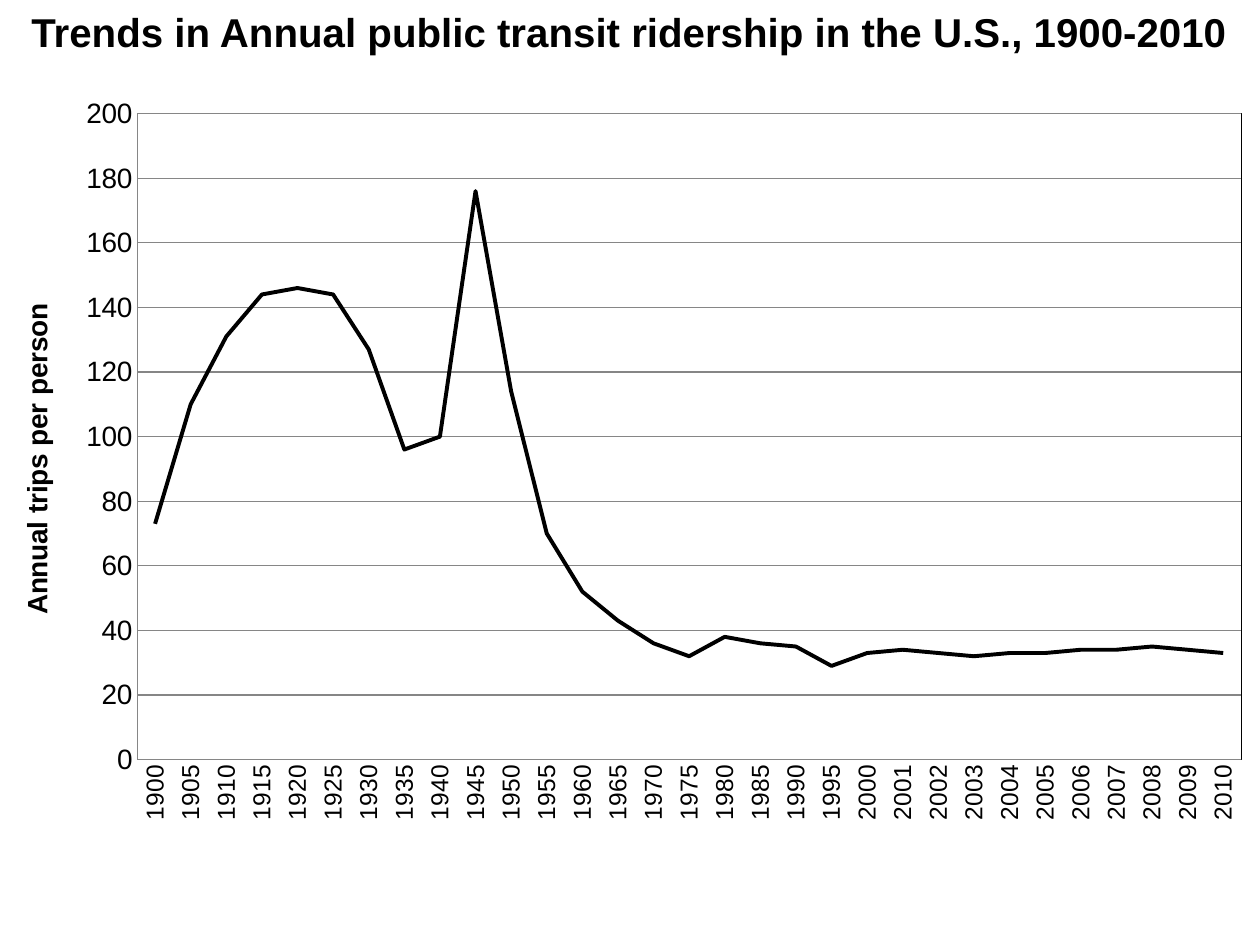
from dataclasses import dataclass

from lxml.etree import SubElement
from pptx import Presentation
from pptx.chart.data import CategoryChartData
from pptx.dml.color import RGBColor
from pptx.enum.chart import XL_CHART_TYPE, XL_TICK_MARK
from pptx.enum.text import MSO_ANCHOR, PP_ALIGN
from pptx.oxml import parse_xml
from pptx.oxml.ns import nsdecls, qn
from pptx.util import Cm, Pt


@dataclass(frozen=True)
class Theme:
    font: str = "Arial"
    ink: RGBColor = RGBColor(0, 0, 0)
    grid: RGBColor = RGBColor(0x86, 0x86, 0x86)
    title: Pt = Pt(23)
    axis: Pt = Pt(16)
    years: Pt = Pt(14)
    base: Pt = Pt(10)


theme = Theme()


def style(font, size, bold=False):
    font.name, font.size, font.bold = theme.font, size, bold
    font.color.rgb = theme.ink


prs = Presentation()
prs.slide_width, prs.slide_height = Cm(25.4), Cm(19.05)
s = prs.slides.add_slide(prs.slide_layouts[6])

# Title
tf = s.shapes.add_textbox(0, Cm(0.03), prs.slide_width, Cm(1.24)).text_frame
tf.word_wrap = True
tf.vertical_anchor = MSO_ANCHOR.TOP
p = tf.paragraphs[0]
p.text = "Trends in Annual public transit ridership in the U.S., 1900-2010"
p.alignment = PP_ALIGN.CENTER
style(p.font, theme.title, bold=True)

# Ridership data: every five years to 2000, then every year
data = CategoryChartData(number_format="0")
data.categories = [str(y) for y in (*range(1900, 2000, 5), *range(2000, 2011))]
data.add_series("Series 1", [
    73, 110, 131, 144, 146, 144, 127, 96, 100, 176,
    114, 70, 52, 43, 36, 32, 38, 36, 35, 29,
    33, 34, 33, 32, 33, 33, 34, 34, 35, 34, 33,
])

# Line chart
chart = s.shapes.add_chart(XL_CHART_TYPE.LINE, 0, Cm(1.9), prs.slide_width,
                           Cm(15.04), data).chart
chart.has_legend = False
chart.has_title = False
style(chart.font, theme.base)
chart.plots[0].vary_by_categories = False
ridership = chart.plots[0].series[0]
ridership.smooth = False
ridership.format.line.color.rgb = theme.ink
ridership.format.line.width = Pt(2.25)

# Axes
years, trips = chart.category_axis, chart.value_axis
for axis, size in ((years, theme.years), (trips, theme.axis)):
    axis.major_tick_mark = axis.minor_tick_mark = XL_TICK_MARK.NONE
    axis.format.line.color.rgb = theme.grid
    axis.format.line.width = Pt(0.75)
    style(axis.tick_labels.font, size)
years.tick_labels.font._element.getparent().getparent().getparent().find(
    qn("a:bodyPr")).set("rot", "-5400000")

trips.minimum_scale, trips.maximum_scale, trips.major_unit = 0, 200, 20
trips.tick_labels.number_format = "0"
trips.tick_labels.number_format_is_linked = False
trips.has_major_gridlines = True
trips.major_gridlines.format.line.color.rgb = theme.grid
trips.major_gridlines.format.line.width = Pt(0.75)
tf = trips.axis_title.text_frame
tf._txBody.find(qn("a:bodyPr")).set("rot", "-5400000")
p = tf.paragraphs[0]
p.text = "Annual trips per person"
style(p.runs[0].font, theme.axis, bold=True)

# Inner plot position and thin frame
plot_area = chart._chartSpace.chart.plotArea
for old in plot_area.findall(qn("c:layout")):
    plot_area.remove(old)
layout = parse_xml(f"<c:layout {nsdecls('c')}><c:manualLayout/></c:layout>")
for tag, val in (("layoutTarget", "inner"), ("xMode", "edge"), ("yMode", "edge"),
                 ("x", "0.109"), ("y", "0.026"), ("w", "0.876"), ("h", "0.866")):
    SubElement(layout[0], qn(f"c:{tag}")).set("val", val)
plot_area.insert(0, layout)
plot_area.append(parse_xml(
    f'<c:spPr {nsdecls("c", "a")}><a:noFill/><a:ln w="3175"><a:solidFill>'
    f'<a:srgbClr val="{theme.ink}"/></a:solidFill></a:ln></c:spPr>'))

prs.save("out.pptx")
